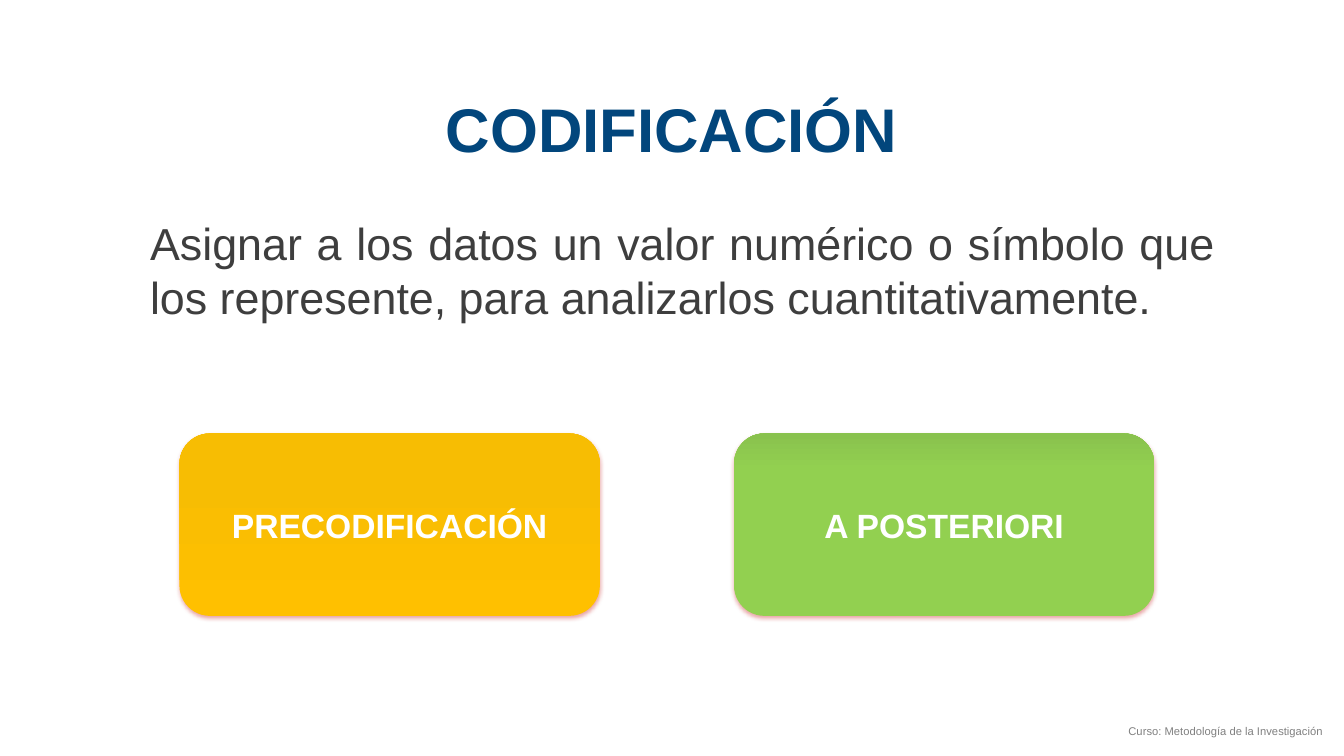
from lxml.etree import SubElement
from pptx import Presentation
from pptx.dml.color import RGBColor
from pptx.enum.shapes import MSO_SHAPE
from pptx.enum.text import MSO_ANCHOR, PP_ALIGN
from pptx.oxml import parse_xml
from pptx.oxml.ns import nsdecls, qn
from pptx.util import Inches, Pt

WIDTH, HEIGHT = 13.33, 7.5
COLORS = {
    "title": "02467C", "body": "3E3E3E", "footer": "808080", "white": "FFFFFF",
    "amber": "FFC000", "amber_dark": "F7BD03",
    "green": "92D050", "green_dark": "89C24E", "shadow": "C00000",
}
FORMATS = {
    "title": {"size": Pt(44), "bold": True},
    "body": {"size": Pt(32), "bold": False},
    "footer": {"size": Pt(8), "bold": False},
    "card": {"size": Pt(24), "bold": True},
}
# Card row: left edge, column step, top, width, height
CARD_LEFT, CARD_STEP, CARD_TOP, CARD_W, CARD_H = 1.78, 5.5, 4.3, 4.17, 1.81
# Label and gradient stops (percent from the bottom edge, colour)
CARDS = [
    ("PRECODIFICACIÓN", [(0, "amber"), (79, "amber_dark"), (100, "amber_dark")]),
    ("A POSTERIORI", [(0, "green"), (80, "green"), (100, "green_dark")]),
]


def write(sp, text, style, color, align, anchor=MSO_ANCHOR.TOP):
    tf = sp.text_frame
    tf.word_wrap = True
    tf.vertical_anchor = anchor
    p = tf.paragraphs[0]
    p.alignment = align
    r = p.add_run()
    r.text = text
    for name, value in {"name": "Arial", **FORMATS[style]}.items():
        setattr(r.font, name, value)
    r.font.color.rgb = RGBColor.from_string(COLORS[color])
    return p


def add_text(slide, box, *args):
    sp = slide.shapes.add_textbox(*map(Inches, box))
    return write(sp, *args)


def set_gradient(sp, stops):
    sp.fill.gradient()
    sp.fill.gradient_angle = 90
    stop_list = sp._element.spPr.find(qn("a:gradFill")).find(qn("a:gsLst"))
    for stop in list(stop_list):
        stop_list.remove(stop)
    for percent, color in stops:
        stop = SubElement(stop_list, qn("a:gs"), pos=str(percent * 1000))
        SubElement(stop, qn("a:srgbClr"), val=COLORS[color])


def set_shadow(sp):
    sp.shadow.inherit = False
    effects = sp._element.spPr.find(qn("a:effectLst"))
    effects.append(parse_xml(
        f'<a:outerShdw {nsdecls("a")} blurRad="{Pt(3.1)}" dist="{Pt(1.8)}" '
        f'dir="5400000" rotWithShape="0"><a:srgbClr val="{COLORS["shadow"]}">'
        '<a:alpha val="35000"/></a:srgbClr></a:outerShdw>'))


def add_card(slide, column, label, stops):
    box = (CARD_LEFT + column * CARD_STEP, CARD_TOP, CARD_W, CARD_H)
    sp = slide.shapes.add_shape(MSO_SHAPE.ROUNDED_RECTANGLE, *map(Inches, box))
    set_gradient(sp, stops)
    sp.line.fill.background()
    set_shadow(sp)
    write(sp, label, "card", "white", PP_ALIGN.CENTER, MSO_ANCHOR.MIDDLE)


def main():
    prs = Presentation()
    prs.slide_width, prs.slide_height = Inches(WIDTH), Inches(HEIGHT)
    slide = prs.slides.add_slide(prs.slide_layouts[5])

    # Title
    title = slide.shapes.title
    title.left, title.top, title.width, title.height = map(
        Inches, (0, 0.81, WIDTH, 0.92))
    write(title, "CODIFICACIÓN", "title", "title", PP_ALIGN.CENTER,
          MSO_ANCHOR.MIDDLE)

    # Definition
    p = add_text(slide, (1.39, 2.09, 10.77, 1.34),
                 "Asignar a los datos un valor numérico o símbolo que los "
                 "represente, para analizarlos cuantitativamente.",
                 "body", "body", PP_ALIGN.JUSTIFY)
    p.space_after = Pt(18)

    # Footer
    add_text(slide, (9.74, 7.14, 3.48, 0.24),
             "Curso: Metodología de la Investigación",
             "footer", "footer", PP_ALIGN.RIGHT)

    # Coding types
    for column, (label, stops) in enumerate(CARDS):
        add_card(slide, column, label, stops)

    prs.save("out.pptx")


if __name__ == "__main__":
    main()
